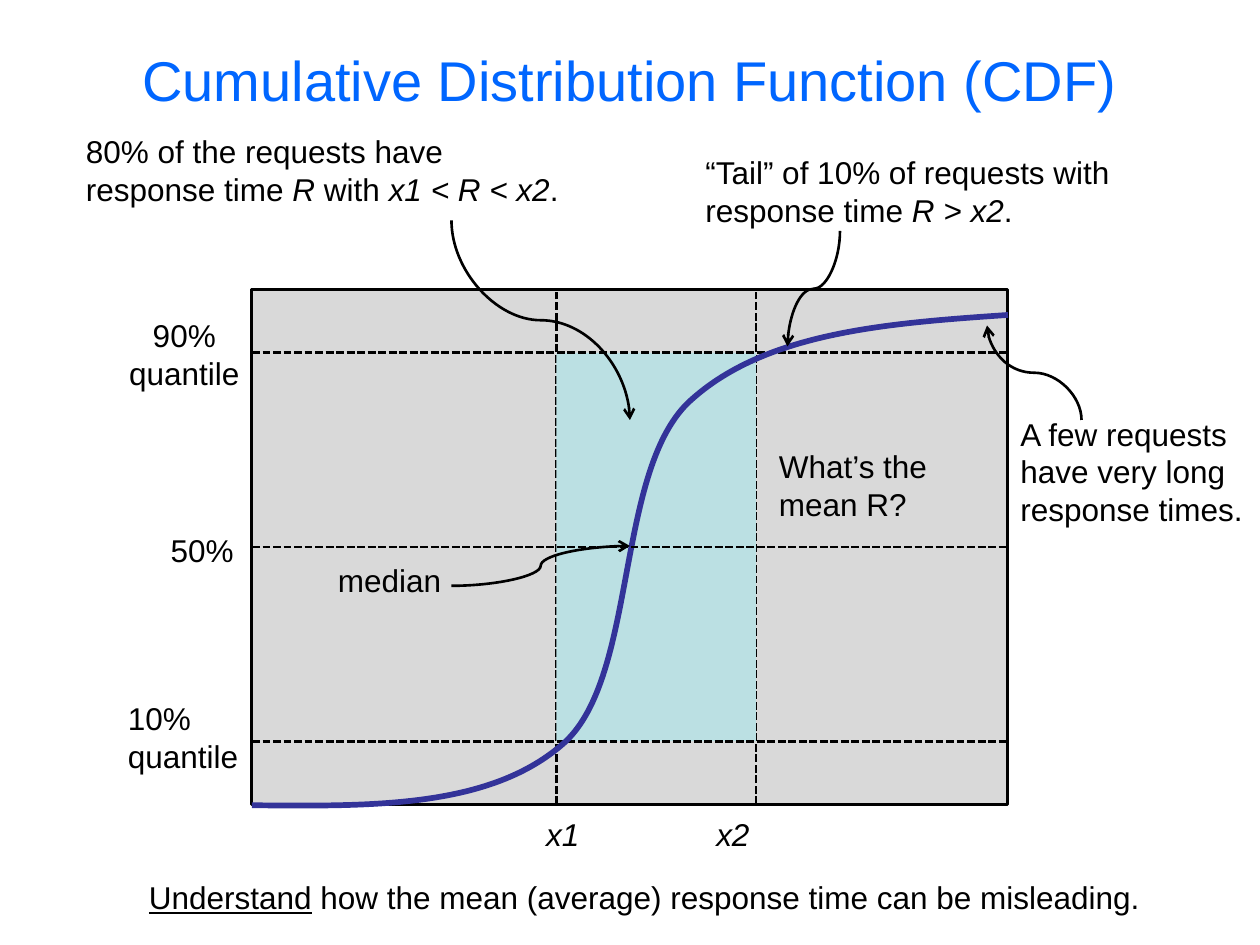
"""Builds the slide on the cumulative distribution function of response times."""
from lxml.etree import SubElement
from pptx import Presentation
from pptx.dml.color import RGBColor
from pptx.enum.dml import MSO_LINE
from pptx.enum.shapes import MSO_CONNECTOR as CONN, MSO_SHAPE as SHAPE
from pptx.enum.text import MSO_ANCHOR as ANCHOR, MSO_AUTO_SIZE as FIT, PP_ALIGN as ALIGN
from pptx.oxml.ns import qn
from pptx.util import Inches, Pt

COLORS = {"ink": "000000", "title": "0066FF", "plot": "D9D9D9", "band": "BBE0E3", "curve": "333399"}
FONT = "Arial"
COLS, ROWS = 120, 90
TITLE = "Cumulative Distribution Function (CDF)"
PLOT = (24, 27.6, 72, 49)
X1, X2 = 53, 72
Q90, Q10 = 33.6, 70.6
CDF = [(24, 76.7), (35.4, 76.8), (46.8, 77), (53.8, 70.7), (60.7, 64.3),
       (58.6, 45.2), (65.5, 38.4), (72.6, 31.7), (84.2, 30.8), (96, 30)]
LABELS = [
    (11, 66, 13.1, [["10%"], ["quantile"]], {"wrap": False}),
    (11, 29.5, 13.1, [["90%"], ["quantile"]], {"wrap": False, "align": ALIGN.CENTER}),
    (15, 50, 8.5, [["50%"]], {"wrap": False, "align": ALIGN.CENTER}),
    (31, 52.8, 12.4, [["median"]], {"wrap": False}),
    (50.4, 77, 6.4, [["", "x1"]], {"wrap": False, "align": ALIGN.CENTER}),
    (66.6, 77, 6.4, [["", "x2"]], {"wrap": False, "align": ALIGN.CENTER}),
    (7, 12, 48, [["80% of the requests have response time ", "R", " with ", "x1 < R < x2", "."]], {"lines": 2}),
    (66, 14, 54, [["“Tail” of 10% of requests with response time ", "R > x2", "."]], {"lines": 2}),
    (73, 42, 19, [["What’s the mean R?"]], {"lines": 2}),
    (96, 38.9, 27, [["A few requests have very long response times."]], {"lines": 3}),
    (13, 83, 97, [["", "Understand", " how the mean (average) response time can be misleading."]],
     {"accent": "underline"}),
]
ARROWS = [
    ((43, 55.8), (60, 52), False),
    ((43, 21), (60, 40), True),
    ((80, 22), (75, 33), True),
    ((103, 40), (94, 31), True),
]

prs = Presentation()
prs.slide_width, prs.slide_height = Inches(10), Inches(7.5)
s = prs.slides.add_slide(prs.slide_layouts[5])


def grid(x, y):
    return round(prs.slide_width * x / COLS), round(prs.slide_height * y / ROWS)


def color(name):
    return RGBColor.from_string(COLORS[name])


def style_line(shape, width, name="ink"):
    shape.line.color.rgb = color(name)
    shape.line.width = Pt(width)


def add_block(x, y, w, h, fill, outline=None):
    sp = s.shapes.add_shape(SHAPE.RECTANGLE, *grid(x, y), *grid(w, h))
    sp.shadow.inherit = False
    sp.fill.solid()
    sp.fill.fore_color.rgb = color(fill)
    if outline:
        style_line(sp, outline)
    else:
        sp.line.fill.background()
    return sp


def add_line(start, end, kind=CONN.STRAIGHT, dash=None):
    cxn = s.shapes.add_connector(kind, *grid(*start), *grid(*end))
    style_line(cxn, 1.5)
    cxn.line.dash_style = dash
    SubElement(cxn._element.spPr, qn("a:effectLst"))
    return cxn


def add_arrow(start, end, vertical):
    turn = 0
    if vertical:
        (x1, y1), (x2, y2) = start, end
        cx, cy, dx, dy = (x1 + x2) / 2, (y1 + y2) / 2, x2 - x1, y2 - y1
        turn = 1 if dx * dy < 0 else -1
        a, b = turn * dy / 2, -turn * dx / 2
        start, end = (cx - a, cy - b), (cx + a, cy + b)
    cxn = add_line(start, end, CONN.CURVE)
    if turn:
        cxn._element.spPr.find(qn("a:xfrm")).set("rot", str(turn % 4 * 90 * 60000))
    SubElement(cxn.line._get_or_add_ln(), qn("a:tailEnd"), type="arrow")


def add_curve(points):
    builder = s.shapes.build_freeform(*grid(*points[0]))
    builder.add_line_segments([grid(*pt) for pt in points[1:]], close=False)
    sp = builder.convert_to_shape()
    sp.shadow.inherit = False
    sp.fill.background()
    style_line(sp, 3.25, "curve")
    segments = list(sp._element.iter(qn("a:lnTo")))
    outline = segments[0].getparent()
    for i in range(0, len(segments), 3):
        bezier = SubElement(outline, qn("a:cubicBezTo"))
        for segment in segments[i:i + 3]:
            bezier.append(segment[0])
            outline.remove(segment)


def write(p, text, size=18, name="ink"):
    r = p.add_run()
    r.text = text
    r.font.name, r.font.size = FONT, Pt(size)
    r.font.color.rgb = color(name)
    return r


def add_label(x, y, w, paragraphs, wrap=True, align=ALIGN.LEFT, lines=None, accent="italic"):
    height = 1.2 + 3.65 * (lines or len(paragraphs))
    tf = s.shapes.add_textbox(*grid(x, y), *grid(w, height)).text_frame
    tf.word_wrap, tf.auto_size = wrap, FIT.SHAPE_TO_FIT_TEXT
    for i, runs in enumerate(paragraphs):
        p = tf.add_paragraph() if i else tf.paragraphs[0]
        p.alignment = align
        for j, text in enumerate(runs):
            if text:
                setattr(write(p, text).font, accent, j % 2 == 1)


left, top, width, height = PLOT
right, bottom = left + width, top + height
middle = top + height / 2
dashed = {"dash": MSO_LINE.SQUARE_DOT}

plot = add_block(*PLOT, "plot", 1.75)
for x in (X1, X2):
    add_line((x, bottom), (x, top), **dashed)
add_block(X1, Q90, X2 - X1, Q10 - Q90, "band")
for y in (Q90, Q10):
    add_line((left, y), (right, y), **dashed)
add_curve(CDF)
median = add_line((left, middle), (right, middle), **dashed)
median.begin_connect(plot, 1)
median.end_connect(plot, 3)
for arrow in ARROWS:
    add_arrow(*arrow)
for x, y, w, paragraphs, options in LABELS:
    add_label(x, y, w, paragraphs, **options)

title = s.shapes.title
title.left, title.top = grid(6, 0)
title.width, title.height = grid(108, 15)
title.text_frame.vertical_anchor = ANCHOR.MIDDLE
p = title.text_frame.paragraphs[0]
p.alignment = ALIGN.CENTER
write(p, TITLE, size=32, name="title")

prs.save("out.pptx")
